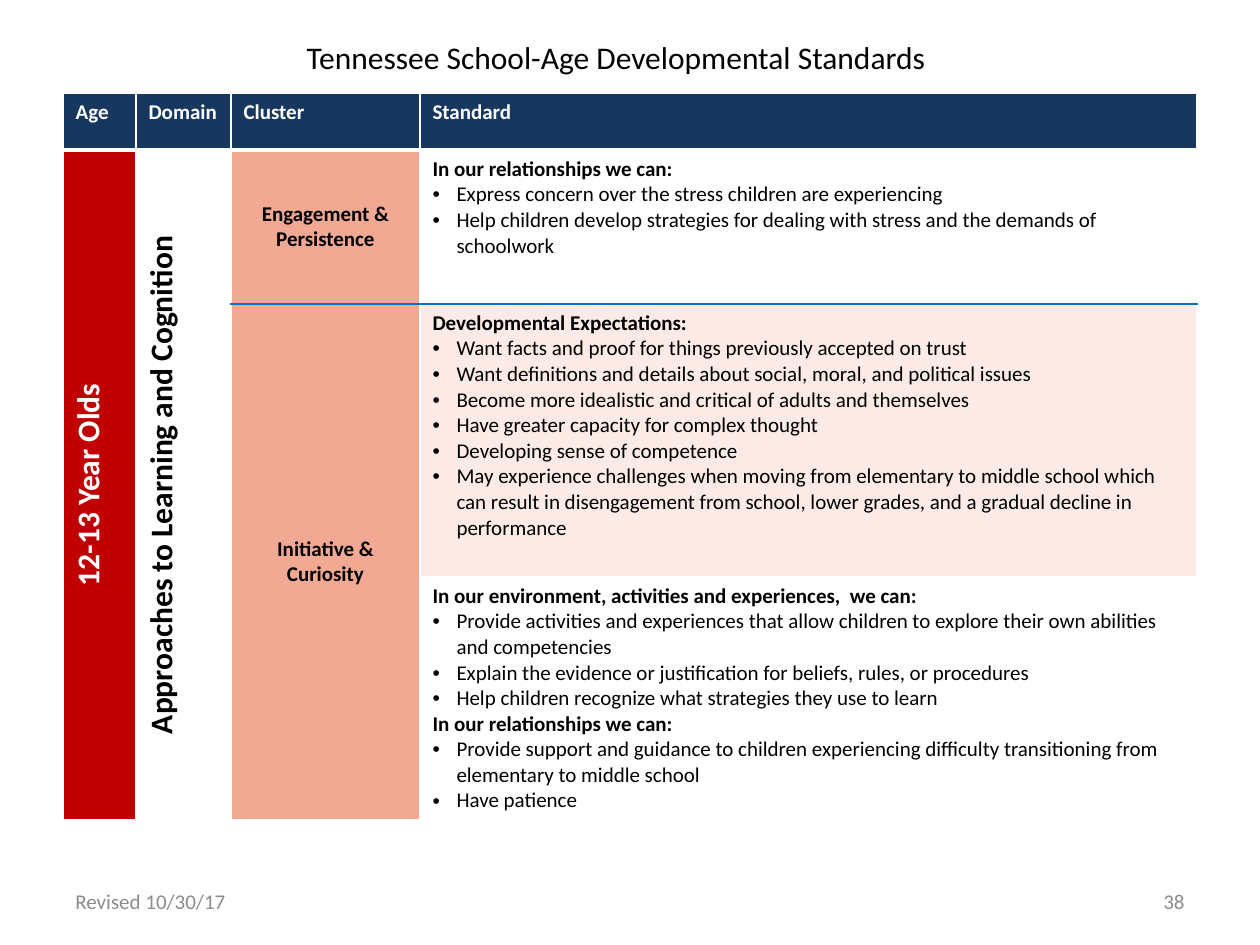
from lxml import etree
from pptx import Presentation
from pptx.dml.color import RGBColor
from pptx.enum.text import MSO_ANCHOR as Anchor, MSO_AUTO_SIZE as AutoSize, PP_ALIGN as Align
from pptx.oxml.ns import qn
from pptx.util import Pt

EMU_PER_PX = 914400 // 126
NAVY, RED, SALMON, BLUSH = "17375E", "C00000", "F1A993", "FBEAE5"
WHITE, BLACK, BLUE, GREY = "FFFFFF", "000000", "0070C0", "8C8C8C"


def px(length):
    return length * EMU_PER_PX


def color(code):
    return RGBColor.from_string(code)


class SlideBuilder:
    font = "Calibri"
    bullet_indent = 24

    def __init__(self, deck):
        self.slide = deck.slides.add_slide(deck.slide_layouts[5])

    def run(self, para, text, size=12, code=BLACK, bold=False):
        span = para.add_run()
        span.text = text
        span.font.name, span.font.size, span.font.bold = self.font, Pt(size), bold
        span.font.color.rgb = color(code)

    def place(self, box, left, top, width, height):
        box.left, box.top, box.width, box.height = map(px, (left, top, width, height))

    def title(self, text, *area):
        box = self.slide.shapes.title
        self.place(box, *area)
        frame = box.text_frame
        frame.auto_size = AutoSize.NONE
        frame.vertical_anchor = Anchor.TOP
        frame.paragraphs[0].alignment = Align.LEFT
        self.run(frame.paragraphs[0], text, 18)

    def footer(self, text, align, *area):
        box = self.slide.shapes.add_textbox(*map(px, area))
        frame = box.text_frame
        frame.word_wrap = True
        frame.vertical_anchor = Anchor.MIDDLE
        frame.paragraphs[0].alignment = align
        self.run(frame.paragraphs[0], text, code=GREY)

    def table(self, left, top, widths, heights):
        area = map(px, (left, top, sum(widths), sum(heights)))
        table = self.slide.shapes.add_table(len(heights), len(widths), *area).table
        table.horz_banding = False
        for column, width in zip(table.columns, widths):
            column.width = px(width)
        for row, height in zip(table.rows, heights):
            row.height = px(height)
        return table

    def cell_style(self, cell, fill, top=(WHITE, 1), bottom=(WHITE, 1)):
        props = cell._tc.get_or_add_tcPr()
        sides = {"L": (WHITE, 1), "R": (WHITE, 1), "T": top, "B": bottom}
        for side, (code, width) in sides.items():
            line = etree.SubElement(props, qn(f"a:ln{side}"), w=str(Pt(width)))
            solid = etree.SubElement(line, qn("a:solidFill"))
            etree.SubElement(solid, qn("a:srgbClr"), val=code)
        cell.fill.solid()
        cell.fill.fore_color.rgb = color(fill)

    def label(self, cell, text, size=12, code=BLACK, align=Align.CENTER,
              anchor=Anchor.MIDDLE, upright=True):
        cell.vertical_anchor = anchor
        if not upright:
            cell._tc.get_or_add_tcPr().set("vert", "vert270")
        para = cell.text_frame.paragraphs[0]
        para.alignment = align
        self.run(para, text, size, code, bold=True)

    def bullet(self, para):
        props = para._p.get_or_add_pPr()
        props.set("marL", str(px(self.bullet_indent)))
        props.set("indent", str(-px(self.bullet_indent)))
        etree.SubElement(props, qn("a:buFont"), typeface="Arial")
        etree.SubElement(props, qn("a:buChar"), char="•")

    def standards(self, cell, groups):
        frame = cell.text_frame
        para = frame.paragraphs[0]
        for number, (heading, items) in enumerate(groups):
            if number:
                para = frame.add_paragraph()
            self.run(para, heading, bold=True)
            for item in items:
                para = frame.add_paragraph()
                self.bullet(para)
                self.run(para, item)


HEADERS = ["Age", "Domain", "Cluster", "Standard"]
RELATIONSHIPS = "In our relationships we can:"
STANDARDS = [
    [(RELATIONSHIPS, [
        "Express concern over the stress children are experiencing",
        "Help children develop strategies for dealing with stress and the demands of schoolwork",
    ])],
    [("Developmental Expectations:", [
        "Want facts and proof for things previously accepted on trust",
        "Want definitions and details about social, moral, and political issues",
        "Become more idealistic and critical of adults and themselves",
        "Have greater capacity for complex thought",
        "Developing sense of competence",
        "May experience challenges when moving from elementary to middle school which can "
        "result in disengagement from school, lower grades, and a gradual decline in performance",
    ])],
    [("In our environment, activities and experiences,  we can:", [
        "Provide activities and experiences that allow children to explore their own abilities "
        "and competencies",
        "Explain the evidence or justification for beliefs, rules, or procedures",
        "Help children recognize what strategies they use to learn",
    ]), (RELATIONSHIPS, [
        "Provide support and guidance to children experiencing difficulty transitioning from "
        "elementary to middle school",
        "Have patience",
    ])],
]


def main():
    deck = Presentation()
    deck.slide_width, deck.slide_height = px(1260), px(945)
    page = SlideBuilder(deck)

    # Table grid: fills and rules
    table = page.table(63, 93, [73, 95, 189, 777], [57, 154, 273, 239])
    body_fills = [[RED, WHITE, SALMON, fill] for fill in (WHITE, BLUSH, WHITE)]
    for r, fills in enumerate([[NAVY] * 4] + body_fills):
        for c, fill in enumerate(fills):
            top = (BLUE, 1) if r == 2 and c > 1 else (WHITE, 3 if r == 1 else 1)
            bottom = (BLUE, 1) if r == 1 and c > 1 else (WHITE, 3 if r == 0 else 1)
            page.cell_style(table.cell(r, c), fill, top, bottom)
    for first, column in ((1, 0), (1, 1), (2, 2)):
        table.cell(first, column).merge(table.cell(3, column))

    # Header row
    for c, text in enumerate(HEADERS):
        page.label(table.cell(0, c), text, code=WHITE, align=Align.LEFT, anchor=Anchor.TOP)

    # Age, domain and clusters
    page.label(table.cell(1, 0), "12-13 Year Olds", 18, WHITE, anchor=Anchor.TOP, upright=False)
    page.label(table.cell(1, 1), "Approaches to Learning and Cognition", 18, upright=False)
    page.label(table.cell(1, 2), "Engagement & Persistence")
    page.label(table.cell(2, 2), "Initiative & Curiosity")

    # Standards
    for r, groups in enumerate(STANDARDS, start=1):
        page.standards(table.cell(r, 3), groups)

    # Title and footer
    page.title("Tennessee School-Age Developmental Standards", 294, 32, 672, 50)
    page.footer("Revised 10/30/17", Align.LEFT, 63, 876, 294, 50)
    page.footer("38", Align.RIGHT, 903, 876, 294, 50)

    deck.save("out.pptx")


if __name__ == "__main__":
    main()
